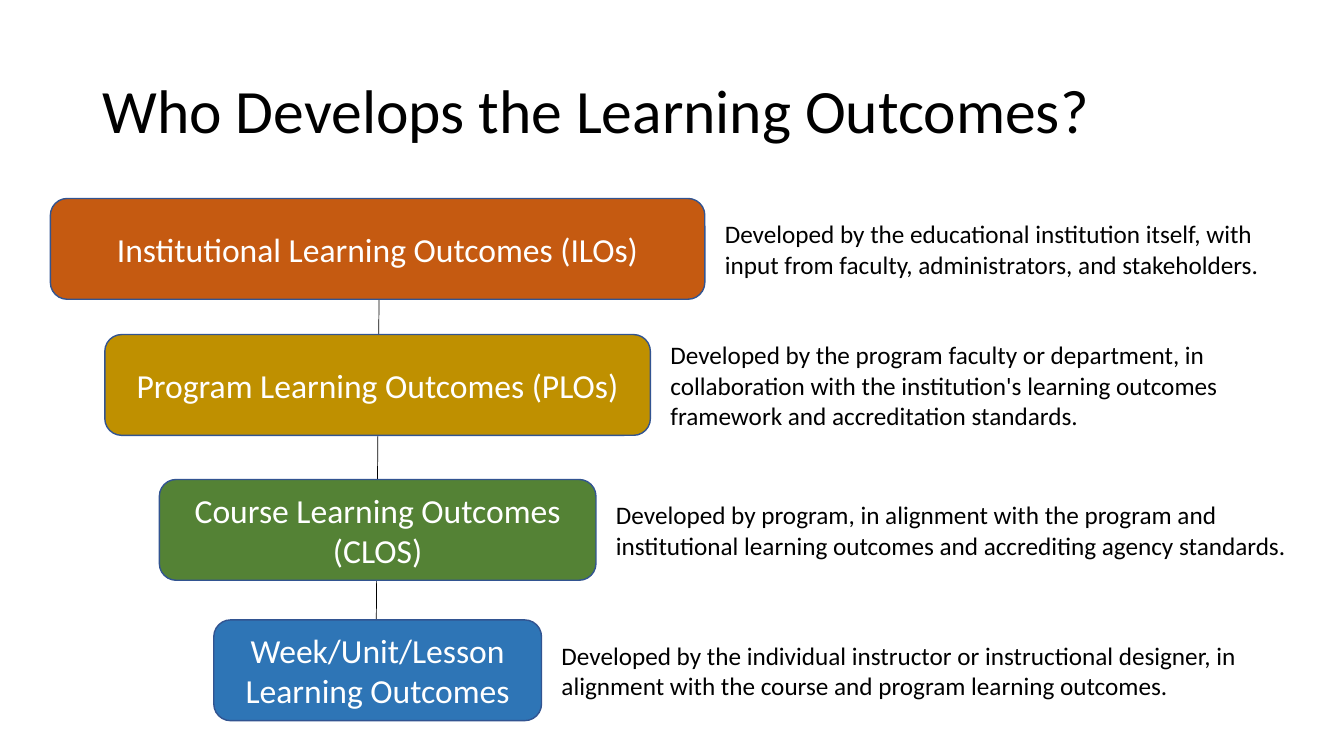
from lxml import etree
from pptx import Presentation
from pptx import util as u
from pptx.dml import color
from pptx.enum import shapes, text
from pptx.oxml import ns

FONT = "Calibri"
GAP = 7.2  # between a level's box and its note

# label, fill, top, note, note width
LEVELS = [
    ("Institutional Learning Outcomes (ILOs)", "C55A11", 141.8,
     "Developed by the educational institution itself, with input from "
     "faculty, administrators, and stakeholders.", 399),
    ("Program Learning Outcomes (PLOs)", "BF9000", 239,
     "Developed by the program faculty or department, in collaboration with "
     "the institution's learning outcomes framework and accreditation "
     "standards.", 474),
    ("Course Learning Outcomes (CLOS)", "548235", 342.5,
     "Developed by program, in alignment with the program and institutional "
     "learning outcomes and accrediting agency standards.", 507),
    ("Week/Unit/Lesson Learning Outcomes", "2E75B6", 442.8,
     "Developed by the individual instructor or instructional designer, in "
     "alignment with the course and program learning outcomes.", 515.5),
]


def rgb(value):
    return color.RGBColor.from_string(value)


def write(frame, words, size, ink, align):
    frame.word_wrap = True
    frame.vertical_anchor = text.MSO_ANCHOR.MIDDLE
    paragraph = frame.paragraphs[0]
    paragraph.alignment = align
    run = paragraph.add_run()
    run.text = words
    run.font.name = FONT
    run.font.size = u.Pt(size)
    run.font.color.rgb = rgb(ink)
    return paragraph


def add_heading(slide, left, top, width, height):
    heading = slide.shapes.title
    heading.left, heading.top = u.Pt(left), u.Pt(top)
    heading.width, heading.height = u.Pt(width), u.Pt(height)
    heading.text_frame.auto_size = text.MSO_AUTO_SIZE.NONE
    paragraph = write(heading.text_frame, "Who Develops the Learning Outcomes?",
                      44, "000000", text.PP_ALIGN.LEFT)
    paragraph.line_spacing = 0.9


def add_spine(slide, x1, y1, x2, y2):
    spine = slide.shapes.add_connector(
        shapes.MSO_CONNECTOR.STRAIGHT, u.Pt(x1), u.Pt(y1), u.Pt(x2), u.Pt(y2))
    spine.line.color.rgb = rgb("000000")
    spine.line.width = u.Pt(0.5)
    etree.SubElement(spine._element.spPr, ns.qn("a:effectLst"))


def add_level(slide, left, top, width, height, label, fill, note, note_width):
    # Level box
    level = slide.shapes.add_shape(
        shapes.MSO_SHAPE.ROUNDED_RECTANGLE,
        u.Pt(left), u.Pt(top), u.Pt(width), u.Pt(height))
    level.shadow.inherit = False
    level.fill.solid()
    level.fill.fore_color.rgb = rgb(fill)
    level.line.color.rgb = rgb("325491")
    level.line.width = u.Pt(1)
    write(level.text_frame, label, 24, "FFFFFF", text.PP_ALIGN.CENTER)

    # Who develops it, centred beside the box
    developer = slide.shapes.add_textbox(
        u.Pt(left + width + GAP), u.Pt(top), u.Pt(note_width), u.Pt(height))
    write(developer.text_frame, note, 18, "000000", text.PP_ALIGN.LEFT)


def add_hierarchy(slide, left, top_width, inset, height):
    # Spine behind the boxes, from the first level to the last
    center = left + top_width / 2
    add_spine(slide, center + 1, LEVELS[0][2] + height,
              center - 1, LEVELS[-1][2] + GAP)

    # Each level is inset equally on both sides
    for depth, (label, fill, top, note, note_width) in enumerate(LEVELS):
        add_level(slide, left + depth * inset, top,
                  top_width - 2 * depth * inset, height,
                  label, fill, note, note_width)


def main():
    deck = Presentation()
    deck.slide_width, deck.slide_height = u.Pt(960), u.Pt(540)
    slide = deck.slides.add_slide(deck.slide_layouts[5])
    add_heading(slide, 66, 28.75, 828, 104.4)
    add_hierarchy(slide, 36, 467.5, 38.9, 72)
    deck.save("out.pptx")


if __name__ == "__main__":
    main()
